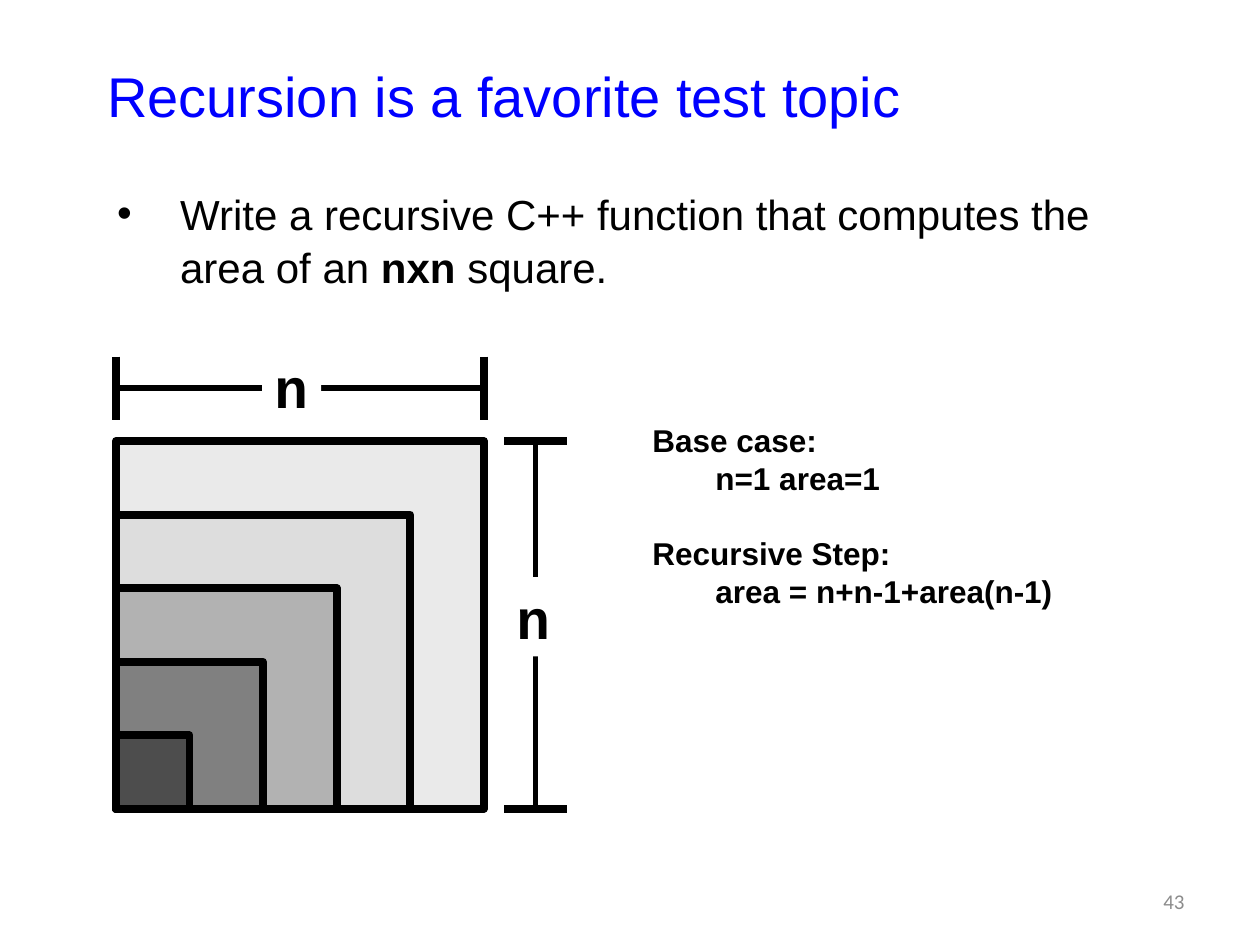
from lxml.etree import SubElement
from pptx import Presentation
from pptx.dml.color import RGBColor
from pptx.enum.shapes import MSO_CONNECTOR as Connector, MSO_SHAPE as Shape
from pptx.enum.text import MSO_ANCHOR as Anchor, PP_ALIGN as Align
from pptx.oxml.ns import qn
from pptx.util import Inches, Pt

COLORS = {"title": "0000FF", "ink": "000000", "paper": "FFFFFF", "number": "8C8C8C"}
TITLE = "Recursion is a favorite test topic"
TASK = [
    ("Write a recursive C++ function that computes the area of an ", False),
    ("nxn", True),
    (" square.", False),
]
CASES = [("Base case:", "n=1 area=1"), ("Recursive Step:", "area = n+n-1+area(n-1)")]
SQUARE_FILLS = ["EAEAEA", "DDDDDD", "B2B2B2", "808080", "4D4D4D"]
PAGE = "43"

LEFT, TOP, SIDE = 0.92, 3.5, 2.92
RIGHT, BOTTOM = LEFT + SIDE, TOP + SIDE
WIDTH_Y, HEIGHT_X = 3.08, 4.25
CAP = 0.25

prs = Presentation()
prs.slide_width, prs.slide_height = Inches(10), Inches(7.5)
slide = prs.slides.add_slide(prs.slide_layouts[1])


def color(name):
    return RGBColor.from_string(COLORS.get(name, name))


def place(part, left, top, width, height):
    part.left, part.top = Inches(left), Inches(top)
    part.width, part.height = Inches(width), Inches(height)


def add_text(paragraph, text, size=18, font="Arial", ink="ink", bold=False,
             align=Align.LEFT):
    paragraph.alignment = align
    run = paragraph.add_run()
    run.text = text
    run.font.size, run.font.name, run.font.bold = Pt(size), font, bold
    run.font.color.rgb = color(ink)


def add_line(x1, y1, x2, y2, weight):
    line = slide.shapes.add_connector(
        Connector.STRAIGHT, Inches(x1), Inches(y1), Inches(x2), Inches(y2))
    line.line.color.rgb = color("ink")
    line.line.width = Pt(weight)
    SubElement(line._element.spPr, qn("a:effectLst"))


def add_square(side, fill):
    square = slide.shapes.add_shape(
        Shape.RECTANGLE, Inches(LEFT), Inches(BOTTOM - side), Inches(side), Inches(side))
    square.shadow.inherit = False
    square.fill.solid()
    square.fill.fore_color.rgb = color(fill)
    square.line.color.rgb = color("ink")
    square.line.width = Pt(4.5)


def add_box(left, top, width, height, wrap=True):
    box = slide.shapes.add_textbox(
        Inches(left), Inches(top), Inches(width), Inches(height))
    box.text_frame.word_wrap = wrap
    return box


def add_size_label(left, top):
    label = add_box(left, top, 0.47, 0.63, wrap=False)
    label.fill.solid()
    label.fill.fore_color.rgb = color("paper")
    add_text(label.text_frame.paragraphs[0], "n", size=32, font="Courier New", bold=True)


page_box = add_box(7.17, 6.95, 2.33, 0.4)
page_box.text_frame.vertical_anchor = Anchor.MIDDLE
add_text(page_box.text_frame.paragraphs[0], PAGE, size=12, font="Calibri",
         ink="number", align=Align.RIGHT)

title = slide.shapes.title
place(title, 0.75, 0.42, 8.5, 0.67)
title.text_frame.vertical_anchor = Anchor.MIDDLE
add_text(title.text_frame.paragraphs[0], TITLE, size=32, ink="title")

body = slide.placeholders[1]
place(body, 0.83, 1.42, 8.5, 5.33)
task = body.text_frame.paragraphs[0]
task.space_before, task.line_spacing = Pt(0), 1.06
task_format = task._p.get_or_add_pPr()
task_format.set("marL", str(Inches(0.5)))
task_format.set("indent", str(Inches(-0.5)))
SubElement(task_format, qn("a:buChar")).set("char", "•")
for words, bold in TASK:
    add_text(task, words, size=24, bold=bold)

for step, fill in enumerate(SQUARE_FILLS):
    add_square(SIDE * (1 - step / len(SQUARE_FILLS)), fill)

add_line(HEIGHT_X, TOP, HEIGHT_X, BOTTOM, 3)
add_size_label(4, 4.58)
for y in (TOP, BOTTOM):
    add_line(HEIGHT_X - CAP, y, HEIGHT_X + CAP, y, 4.5)

add_line(LEFT, WIDTH_Y, RIGHT, WIDTH_Y, 3)
add_size_label(2.08, 2.75)
for x in (LEFT, RIGHT):
    add_line(x, WIDTH_Y - CAP, x, WIDTH_Y + CAP, 4.5)

cases_frame = add_box(5.08, 3.29, 4.77, 2.1).text_frame
for index, (heading, rule) in enumerate(CASES):
    heading_line = cases_frame.add_paragraph() if index else cases_frame.paragraphs[0]
    if index:
        heading_line.space_before = Pt(21.6)
    add_text(heading_line, heading, bold=True)
    add_text(cases_frame.add_paragraph(), "\t" + rule, bold=True)

prs.save("out.pptx")
